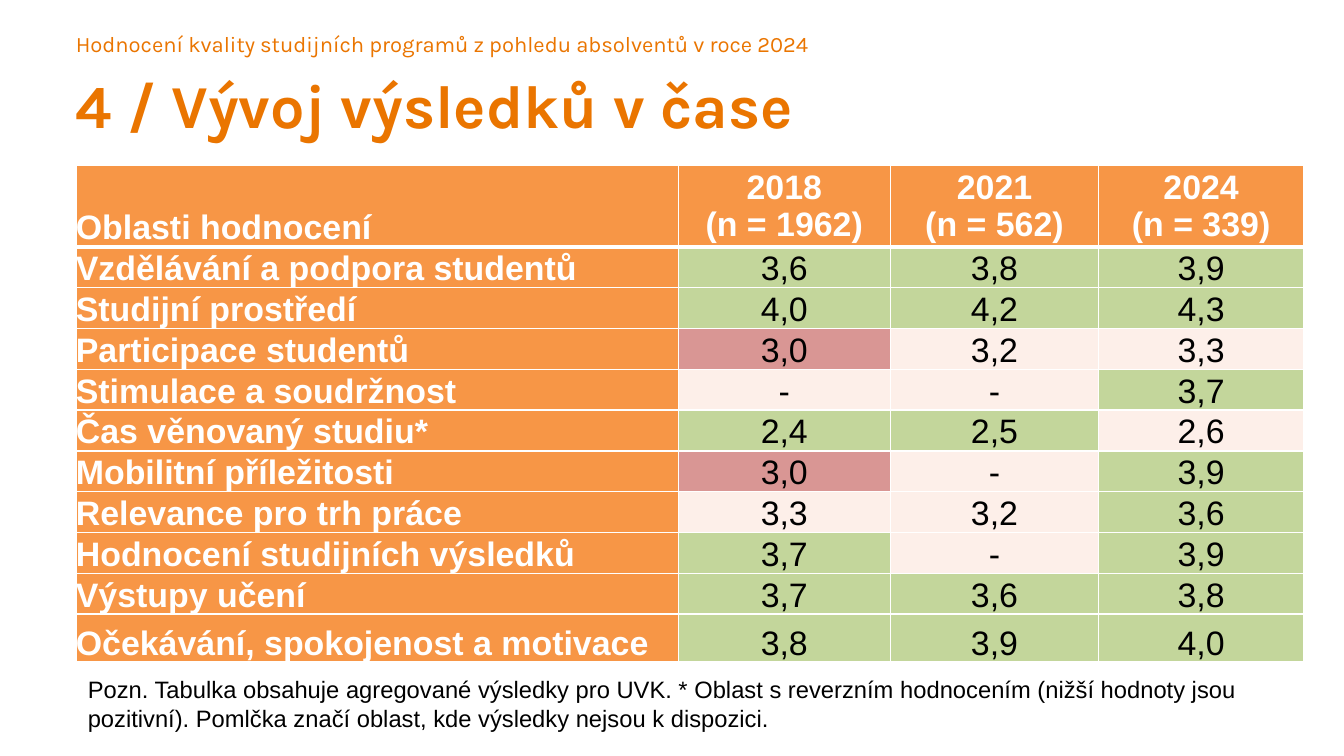
from dataclasses import dataclass

from lxml import etree
from pptx import Presentation
from pptx.dml.color import RGBColor as RGB
from pptx.enum.text import MSO_ANCHOR as Anchor, MSO_AUTO_SIZE as AutoSize, PP_ALIGN as Align
from pptx.oxml.ns import qn
from pptx.util import Cm, Pt


@dataclass(frozen=True)
class Theme:
    heading_font: str = "Karla"
    body_font: str = "Arial"
    accent: str = "EA7500"
    header: str = "F79646"
    white: str = "FFFFFF"
    black: str = "000000"
    good: str = "C3D69B"
    neutral: str = "FDEFE9"
    poor: str = "D99694"
    title_size: int = 36
    kicker_size: int = 13
    table_size: int = 20
    note_size: int = 14
    thin: int = 1
    thick: int = 3


THEME = Theme()
YEARS = ["2018\n(n = 1962)", "2021\n(n = 562)", "2024\n(n = 339)"]
RESULTS = [
    ("Vzdělávání a podpora studentů", "3,6", "3,8", "3,9"),
    ("Studijní prostředí", "4,0", "4,2", "4,3"),
    ("Participace studentů", "3,0", "3,2", "3,3"),
    ("Stimulace a soudržnost", "-", "-", "3,7"),
    ("Čas věnovaný studiu*", "2,4", "2,5", "2,6"),
    ("Mobilitní příležitosti", "3,0", "-", "3,9"),
    ("Relevance pro trh práce", "3,3", "3,2", "3,6"),
    ("Hodnocení studijních výsledků", "3,7", "-", "3,9"),
    ("Výstupy učení", "3,7", "3,6", "3,8"),
    ("Očekávání, spokojenost a motivace", "3,8", "3,9", "4,0"),
]
NOTE = ("Pozn. Tabulka obsahuje agregované výsledky pro UVK. * Oblast s reverzním "
        "hodnocením (nižší hodnoty jsou pozitivní). Pomlčka značí oblast, kde "
        "výsledky nejsou k dispozici.")
COL_WIDTHS = [12.55, 4.42, 4.34, 4.27]
ROW_HEIGHTS = [1.68] + [0.85] * 9 + [1.0]


def style_text(tf, font, size, color, bold=False, align=Align.LEFT):
    for p in tf.paragraphs:
        p.alignment = align
        p.font.name = font
        p.font.size = Pt(size)
        p.font.bold = bold
        p.font.color.rgb = RGB.from_string(color)


def add_text(slide, box, text, font, size, color, bold=False, margins=None):
    tf = slide.shapes.add_textbox(*map(Cm, box)).text_frame
    tf.word_wrap = True
    tf.auto_size = AutoSize.SHAPE_TO_FIT_TEXT
    if margins is not None:
        tf.margin_left = tf.margin_top = tf.margin_right = tf.margin_bottom = Cm(margins)
    tf.text = text
    style_text(tf, font, size, color, bold)


def set_borders(cell, color, top, bottom):
    tc_pr = cell._tc.get_or_add_tcPr()
    widths = {"lnL": THEME.thin, "lnR": THEME.thin, "lnT": top, "lnB": bottom}
    for tag, width in widths.items():
        ln = etree.SubElement(tc_pr, qn(f"a:{tag}"), w=str(Pt(width)))
        fill = etree.SubElement(ln, qn("a:solidFill"))
        etree.SubElement(fill, qn("a:srgbClr"), val=color)


def rating_color(area, value):
    """Colour a score on the five-point scale; starred areas are reversed."""
    if value == "-":
        return THEME.neutral
    score = float(value.replace(",", "."))
    if area.endswith("*"):
        score = 6 - score
    if score >= 3.5:
        return THEME.good
    return THEME.poor if score <= 3 else THEME.neutral


def add_heading(slide, box):
    left, top, width, height = box
    add_text(slide, (left, top, width, 0.56),
             "Hodnocení kvality studijních programů z pohledu absolventů v roce 2024",
             THEME.heading_font, THEME.kicker_size, THEME.accent, margins=0)
    add_text(slide, (left, top + 0.76, width, height - 0.76), "4 / Vývoj výsledků v čase",
             THEME.heading_font, THEME.title_size, THEME.accent, bold=True, margins=0)


def add_results(slide, box):
    rows = [("Oblasti hodnocení", *YEARS), *RESULTS]
    table = slide.shapes.add_table(len(rows), len(COL_WIDTHS), *map(Cm, box)).table
    table.first_row = table.horz_banding = False
    for col, width in zip(table.columns, COL_WIDTHS):
        col.width = Cm(width)
    for row, height in zip(table.rows, ROW_HEIGHTS):
        row.height = Cm(height)

    for i, values in enumerate(rows):
        for j, text in enumerate(values):
            cell = table.cell(i, j)
            is_label = i == 0 or j == 0
            cell.text = text
            cell.margin_left = cell.margin_top = cell.margin_right = cell.margin_bottom = 0
            cell.vertical_anchor = Anchor.MIDDLE if i == 0 and j else Anchor.BOTTOM
            style_text(cell.text_frame, THEME.body_font, THEME.table_size,
                       THEME.white if is_label else THEME.black, bold=is_label,
                       align=Align.CENTER if j else Align.LEFT)
            set_borders(cell, THEME.white,
                        top=THEME.thick if i == 1 else THEME.thin,
                        bottom=THEME.thick if i == 0 else THEME.thin)
            cell.fill.solid()
            color = THEME.header if is_label else rating_color(values[0], text)
            cell.fill.fore_color.rgb = RGB.from_string(color)


def add_note(slide, box):
    add_text(slide, box, NOTE, THEME.body_font, THEME.note_size, THEME.black)


def main():
    prs = Presentation()
    prs.slide_width, prs.slide_height = Cm(28), Cm(15.75)
    slide = prs.slides.add_slide(prs.slide_layouts[6])
    left = 1.58

    # Heading, results table and footnote, from top to bottom
    add_heading(slide, (left, 0.64, 25.2, 2.31))
    add_results(slide, (left, 3.45, sum(COL_WIDTHS), sum(ROW_HEIGHTS)))
    add_note(slide, (left, 13.94, 25.48, 1.45))
    prs.save("out.pptx")


if __name__ == "__main__":
    main()
